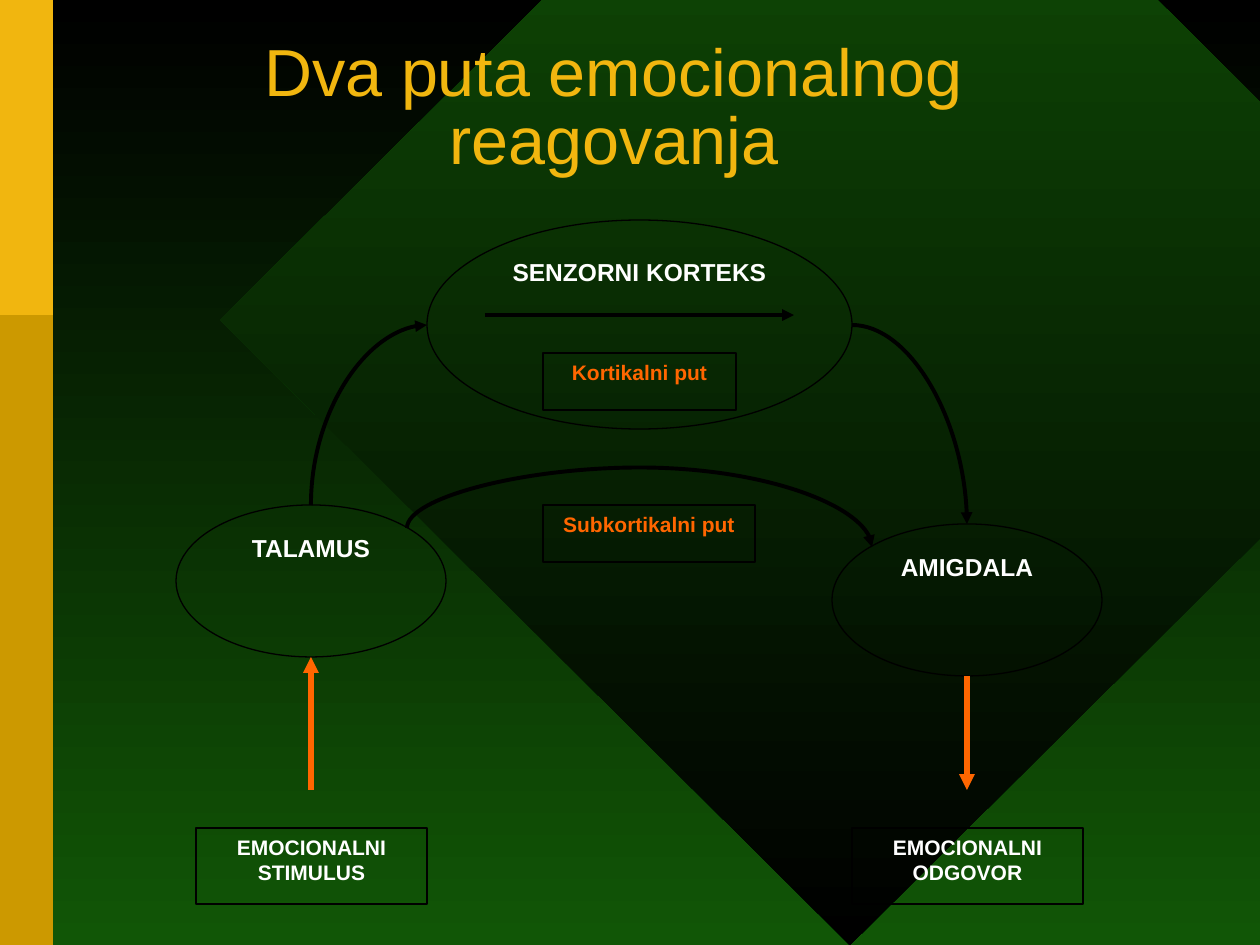
import dataclasses

import lxml.etree
import pptx
import pptx.dml.color
import pptx.enum.shapes
import pptx.enum.text
import pptx.oxml.ns
import pptx.util

SCALE = 914400 / 126
SHAPES = pptx.enum.shapes.MSO_SHAPE
CONNECTORS = pptx.enum.shapes.MSO_CONNECTOR
ANCHORS = pptx.enum.text.MSO_ANCHOR


@dataclasses.dataclass(frozen=True)
class Theme:
    font: str = "Arial"
    black: str = "000000"
    green: str = "115606"
    dark_gold: str = "CC9900"
    gold: str = "F1B60F"
    white: str = "FFFFFF"
    orange: str = "FF6600"
    title_size: int = 38
    node_size: int = 14
    label_size: int = 12
    outline: float = 0.75
    path_line: float = 2.25
    signal_line: float = 3


THEME = Theme()


def emu(*pixels):
    return [round(value * SCALE) for value in pixels]


def rgb(color):
    return pptx.dml.color.RGBColor.from_string(color)


def paint_gradient(fill, first, last):
    fill.gradient()
    fill.gradient_angle = 270
    for stop, color in zip(fill.gradient_stops, (first, last)):
        stop.color.rgb = rgb(color)


def write_text(shape, text, size, color, bold=False, anchor=ANCHORS.TOP, spacing=None):
    text_frame = shape.text_frame
    text_frame.word_wrap = True
    text_frame.vertical_anchor = anchor
    text_frame.text = text
    for paragraph in text_frame.paragraphs:
        paragraph.alignment = pptx.enum.text.PP_ALIGN.CENTER
        paragraph.line_spacing = spacing
        for run in paragraph.runs:
            run.font.name = THEME.font
            run.font.size = pptx.util.Pt(size)
            run.font.bold = bold
            run.font.color.rgb = rgb(color)


def add_plain_shape(slide, kind, box):
    shape = slide.shapes.add_shape(kind, *emu(*box))
    shape.shadow.inherit = False
    shape.line.fill.background()
    return shape


def add_outlined_text(slide, kind, box, text, size, color):
    shape = add_plain_shape(slide, kind, box)
    shape.fill.background()
    shape.line.color.rgb = rgb(THEME.black)
    shape.line.width = pptx.util.Pt(THEME.outline)
    write_text(shape, text, size, color, bold=True)


def add_arrow(slide, start, end, color, width, kind=CONNECTORS.STRAIGHT):
    connector = slide.shapes.add_connector(kind, *emu(*start, *end))
    connector.line.color.rgb = rgb(color)
    connector.line.width = pptx.util.Pt(width)
    line = connector.line._get_or_add_ln()
    lxml.etree.SubElement(line, pptx.oxml.ns.qn("a:tailEnd"), type="triangle")
    properties = connector._element.spPr
    lxml.etree.SubElement(properties, pptx.oxml.ns.qn("a:effectLst"))
    return connector


def add_curved_arrow(slide, start, end, preset, quarter_turns=0, flip=False, bend=None):
    connector = add_arrow(slide, start, end, THEME.black, THEME.path_line, CONNECTORS.CURVE)
    width, height = abs(end[0] - start[0]), abs(end[1] - start[1])
    if quarter_turns % 2:
        width, height = height, width
    left = (start[0] + end[0] - width) / 2
    top = (start[1] + end[1] - height) / 2
    connector.left, connector.top, connector.width, connector.height = emu(left, top, width, height)
    transform = connector._element.spPr.find(pptx.oxml.ns.qn("a:xfrm"))
    transform.set("rot", str(quarter_turns * 5400000))
    transform.set("flipH", "0")
    transform.set("flipV", "1" if flip else "0")
    geometry = connector._element.spPr.find(pptx.oxml.ns.qn("a:prstGeom"))
    geometry.set("prst", preset)
    if bend is not None:
        guides = geometry.find(pptx.oxml.ns.qn("a:avLst"))
        lxml.etree.SubElement(guides, pptx.oxml.ns.qn("a:gd"), name="adj1", fmla=f"val {bend}")


def build_backdrop(slide, box):
    left, top, width, height = box
    paint_gradient(slide.background.fill, THEME.black, THEME.green)
    diamond = add_plain_shape(slide, SHAPES.DIAMOND, (left + 220, top - 305, width, 1250))
    paint_gradient(diamond.fill, THEME.green, THEME.black)
    for band_height, color in ((height, THEME.dark_gold), (height // 3, THEME.gold)):
        band = add_plain_shape(slide, SHAPES.RECTANGLE, (left, top, 53, band_height))
        band.fill.solid()
        band.fill.fore_color.rgb = rgb(color)


def build_title(slide, box):
    title = slide.shapes.add_textbox(*emu(*box))
    write_text(title, "Dva puta emocionalnog reagovanja", THEME.title_size, THEME.gold,
               anchor=ANCHORS.MIDDLE, spacing=0.85)


def build_diagram(slide, box):
    left, top = box[:2]

    def point(x, y):
        return left + x, top + y

    nodes = (
        ("SENZORNI KORTEKS", 251, 0, 425, 209),
        ("TALAMUS", 0, 285, 270, 152),
        ("AMIGDALA", 656, 304, 270, 152),
    )
    for text, x, y, width, height in nodes:
        add_outlined_text(slide, SHAPES.OVAL, (*point(x, y), width, height), text,
                          THEME.node_size, THEME.white)

    add_curved_arrow(slide, point(135, 285), point(251, 105), "curvedConnector2", quarter_turns=3)
    add_curved_arrow(slide, point(676, 105), point(791, 304), "curvedConnector2")
    add_curved_arrow(slide, point(231, 308), point(696, 327), "curvedConnector3",
                     quarter_turns=1, flip=True, bend=-319000)
    add_arrow(slide, point(309, 95), point(618, 95), THEME.black, THEME.path_line)
    for start, end in (((135, 570), (135, 437)), ((791, 456), (791, 570))):
        add_arrow(slide, point(*start), point(*end), THEME.orange, THEME.signal_line)

    labels = (
        ("EMOCIONALNI\nSTIMULUS", 20, 608, 231, 76, THEME.white),
        ("EMOCIONALNI\nODGOVOR", 676, 608, 231, 76, THEME.white),
        ("Subkortikalni put", 367, 285, 212, 57, THEME.orange),
        ("Kortikalni put", 367, 133, 193, 57, THEME.orange),
    )
    for text, x, y, width, height, color in labels:
        add_outlined_text(slide, SHAPES.RECTANGLE, (*point(x, y), width, height), text,
                          THEME.label_size, color)


def main():
    presentation = pptx.Presentation()
    presentation.slide_width, presentation.slide_height = emu(1260, 945)
    slide = presentation.slides.add_slide(presentation.slide_layouts[6])
    build_backdrop(slide, (0, 0, 1260, 945))
    build_title(slide, (94, 32, 1040, 157))
    build_diagram(slide, (176, 220, 927, 684))
    presentation.save("out.pptx")


if __name__ == "__main__":
    main()
